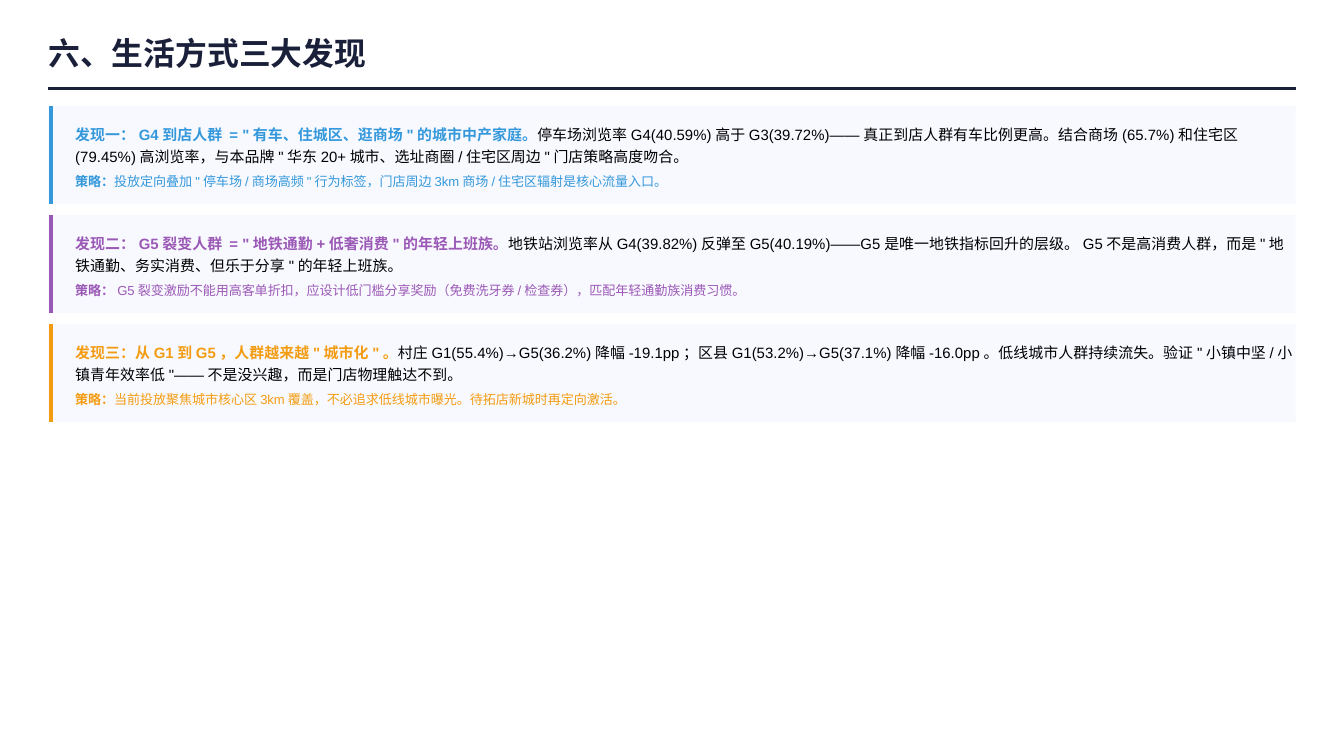
from dataclasses import dataclass

from pptx import Presentation
from pptx.dml.color import RGBColor
from pptx.enum.shapes import MSO_CONNECTOR, MSO_SHAPE
from pptx.enum.text import MSO_ANCHOR, MSO_AUTO_SIZE, PP_ALIGN
from pptx.oxml.ns import qn
from pptx.util import Inches, Pt
from lxml.etree import SubElement


@dataclass(frozen=True)
class Theme:
    font: str = "Arial"
    navy: str = "1A1F3A"
    ink: str = "000000"
    card: str = "F8F9FF"
    blue: str = "3498DB"
    purple: str = "9B59B6"
    orange: str = "F39C12"
    title_size: float = 17
    finding_size: float = 8
    strategy_size: float = 7
    finding_leading: float = 12
    strategy_leading: float = 10.5


THEME = Theme()
SLIDE_WIDTH = 10
SLIDE_HEIGHT = SLIDE_WIDTH * 9 / 16
LEFT, WIDTH = 0.36, 9.28
CARD_TOP, CARD_HEIGHT, CARD_PITCH = 0.79, 0.73, 0.81

FINDINGS = [
    (THEME.blue,
     '发现一：G4到店人群 = "有车、住城区、逛商场"的城市中产家庭。',
     '停车场浏览率G4(40.59%)高于G3(39.72%)——真正到店人群有车比例更高。'
     '结合商场(65.7%)和住宅区(79.45%)高浏览率，'
     '与本品牌"华东20+城市、选址商圈/住宅区周边"门店策略高度吻合。',
     '投放定向叠加"停车场/商场高频"行为标签，门店周边3km商场/住宅区辐射是核心流量入口。'),
    (THEME.purple,
     '发现二：G5裂变人群 = "地铁通勤+低奢消费"的年轻上班族。',
     '地铁站浏览率从G4(39.82%)反弹至G5(40.19%)——G5是唯一地铁指标回升的层级。'
     'G5不是高消费人群，而是"地铁通勤、务实消费、但乐于分享"的年轻上班族。',
     'G5裂变激励不能用高客单折扣，应设计低门槛分享奖励（免费洗牙券/检查券），'
     '匹配年轻通勤族消费习惯。'),
    (THEME.orange,
     '发现三：从G1到G5，人群越来越"城市化"。',
     '村庄G1(55.4%)→G5(36.2%)降幅-19.1pp；区县G1(53.2%)→G5(37.1%)降幅-16.0pp。'
     '低线城市人群持续流失。验证"小镇中坚/小镇青年效率低"——'
     '不是没兴趣，而是门店物理触达不到。',
     '当前投放聚焦城市核心区3km覆盖，不必追求低线城市曝光。待拓店新城时再定向激活。'),
]


def write(shape, runs, *, size, leading=None):
    """Fill a shape with one paragraph of (text, colour, bold) runs."""
    frame = shape.text_frame
    frame.word_wrap = True
    frame.auto_size = MSO_AUTO_SIZE.NONE
    frame.vertical_anchor = MSO_ANCHOR.TOP
    frame.margin_left = frame.margin_right = 0
    frame.margin_top = frame.margin_bottom = 0
    paragraph = frame.paragraphs[0]
    paragraph.alignment = PP_ALIGN.LEFT
    if leading:
        paragraph.line_spacing = Pt(leading)
    for text, color, bold in runs:
        run = paragraph.add_run()
        run.text = text
        run.font.name = THEME.font
        run.font.size = Pt(size)
        run.font.bold = bold
        run.font.color.rgb = RGBColor.from_string(color)


def add_rule(slide, x1, y1, x2, y2, *, color, weight):
    rule = slide.shapes.add_connector(
        MSO_CONNECTOR.STRAIGHT, Inches(x1), Inches(y1), Inches(x2), Inches(y2))
    rule.line.color.rgb = RGBColor.from_string(color)
    rule.line.width = Pt(weight)
    SubElement(rule._element.spPr, qn("a:effectLst"))


def add_header(slide, left, top, width):
    heading = slide.shapes.title
    heading.left, heading.top = Inches(left), Inches(top)
    heading.width, heading.height = Inches(width + 0.18), Inches(0.33)
    write(heading, [("六、生活方式三大发现", THEME.navy, True)],
          size=THEME.title_size)
    rule_y = top + 0.41
    add_rule(slide, left, rule_y, left + width, rule_y,
             color=THEME.navy, weight=1.5)


def add_finding(slide, left, top, width, height, finding):
    accent, claim, evidence, strategy = finding
    card = slide.shapes.add_shape(
        MSO_SHAPE.RECTANGLE, Inches(left), Inches(top), Inches(width), Inches(height))
    card.shadow.inherit = False
    card.fill.solid()
    card.fill.fore_color.rgb = RGBColor.from_string(THEME.card)
    card.line.fill.background()

    edge = left + 0.02
    add_rule(slide, edge, top, edge, top + height, color=accent, weight=2.25)

    def add_text(offset, text_height, runs, **style):
        box = slide.shapes.add_textbox(
            Inches(left + 0.2), Inches(top + offset),
            Inches(width - 0.19), Inches(text_height))
        write(box, runs, **style)

    add_text(0.11, 0.33, [(claim, accent, True), (evidence, THEME.ink, False)],
             size=THEME.finding_size, leading=THEME.finding_leading)
    add_text(0.47, 0.15, [("策略：", accent, True), (strategy, accent, False)],
             size=THEME.strategy_size, leading=THEME.strategy_leading)


def main():
    deck = Presentation()
    deck.slide_width = Inches(SLIDE_WIDTH)
    deck.slide_height = Inches(SLIDE_HEIGHT)
    slide = deck.slides.add_slide(deck.slide_layouts.get_by_name("Title Only"))
    add_header(slide, LEFT, 0.25, WIDTH)
    for row, finding in enumerate(FINDINGS):
        add_finding(slide, LEFT, CARD_TOP + row * CARD_PITCH,
                    WIDTH, CARD_HEIGHT, finding)
    deck.save("out.pptx")


if __name__ == "__main__":
    main()
